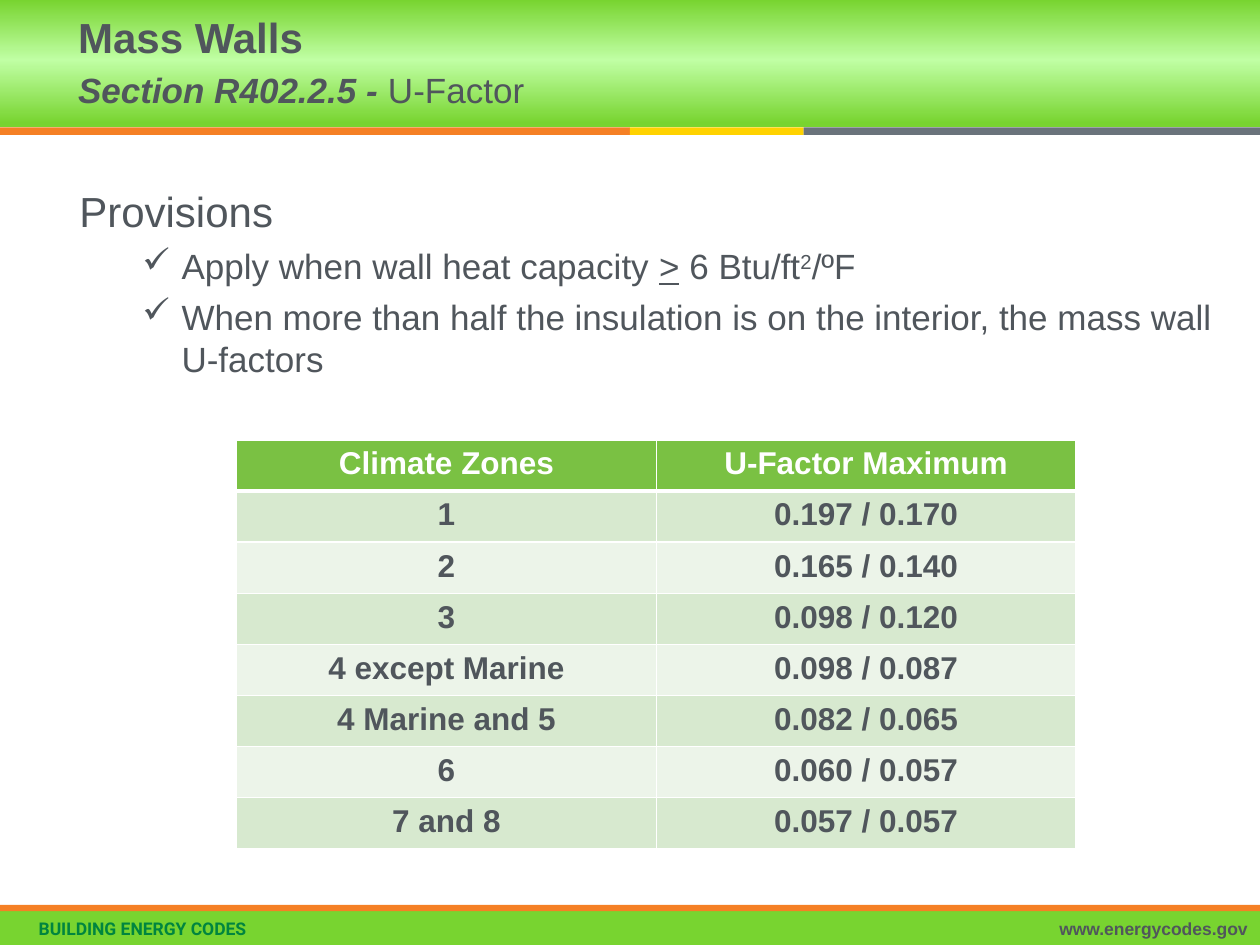
from dataclasses import dataclass

import pptx
import pptx.dml.color
import pptx.enum.shapes
import pptx.enum.text
import pptx.oxml
import pptx.oxml.ns
import pptx.util
from pptx.util import Cm

COLORS = {
    "text": "50565C", "white": "FFFFFF", "green": "78D430", "light": "C0FFA4",
    "brand": "00853F", "orange": "F58025", "yellow": "FFD200", "gray": "6A737B",
    "header": "7AC143", "odd": "D7E9CF", "even": "ECF4E9",
}
NAMESPACE = pptx.oxml.ns.nsdecls("a")
ALIGN = pptx.enum.text.PP_ALIGN
ANCHOR = pptx.enum.text.MSO_ANCHOR


@dataclass
class Bar:
    left: float
    top: float
    width: float
    height: float
    color: str


@dataclass
class Footer:
    text: str
    left: float
    width: float
    inset: float
    align: ALIGN
    font: str
    color: str


BANNER = Bar(-0.08, 0, 25.48, 2.57, "green")
BARS = [
    Bar(0, 18.36, 25.4, 0.69, "green"),
    Bar(0, 2.57, 12.7, 0.15, "orange"),
    Bar(12.7, 2.57, 3.5, 0.15, "yellow"),
    Bar(16.2, 2.57, 9.2, 0.15, "gray"),
    Bar(0, 18.24, 25.4, 0.13, "orange"),
]
FOOTERS = [
    Footer("BUILDING ENERGY CODES", 0.18, 20.24, 0.6, ALIGN.LEFT, "Roboto", "brand"),
    Footer("www.energycodes.gov", 15.21, 10.19, 0.25, ALIGN.RIGHT, "Arial", "text"),
]
ROWS = [
    ("Climate Zones", "U-Factor Maximum"),
    ("1", "0.197 / 0.170"),
    ("2", "0.165 / 0.140"),
    ("3", "0.098 / 0.120"),
    ("4 except Marine", "0.098 / 0.087"),
    ("4 Marine and 5", "0.082 / 0.065"),
    ("6", "0.060 / 0.057"),
    ("7 and 8", "0.057 / 0.057"),
]
BULLETS = [
    [("Apply when wall heat capacity ", {}), (">", {"underline": True}),
     (" 6 Btu/ft", {}), ("2", {"raised": True}), ("/ºF", {})],
    [("When more than half the insulation is on the interior, "
      "the mass wall U-factors", {})],
]


def rgb(name: str) -> pptx.dml.color.RGBColor:
    return pptx.dml.color.RGBColor.from_string(COLORS[name])


def add_span(para, text: str, *, size: float, font: str = "Arial", color: str = "text",
             bold: bool = False, italic: bool = False, underline: bool = False,
             raised: bool = False) -> None:
    span = para.add_run()
    span.text = text
    span.font.size = pptx.util.Pt(size)
    span.font.name = font
    span.font.color.rgb = rgb(color)
    span.font.bold = bold
    span.font.italic = italic
    span.font.underline = underline
    if raised:
        span._r.get_or_add_rPr().set("baseline", "30000")


def add_bar(page, bar: Bar):
    box = page.shapes.add_shape(
        pptx.enum.shapes.MSO_SHAPE.RECTANGLE,
        Cm(bar.left), Cm(bar.top), Cm(bar.width), Cm(bar.height))
    box.shadow.inherit = False
    box.fill.solid()
    box.fill.fore_color.rgb = rgb(bar.color)
    box.line.fill.background()
    return box


def add_banner(page) -> None:
    properties = add_bar(page, BANNER).element.spPr
    stops = "".join(
        f'<a:gs pos="{place * 1000}"><a:srgbClr val="{COLORS[name]}"/></a:gs>'
        for place, name in [(0, "green"), (47, "light"), (97, "green")])
    gradient = pptx.oxml.parse_xml(
        f'<a:gradFill {NAMESPACE} rotWithShape="1"><a:gsLst>{stops}</a:gsLst>'
        '<a:lin ang="5400000" scaled="0"/></a:gradFill>')
    solid = properties.find(pptx.oxml.ns.qn("a:solidFill"))
    properties.replace(solid, gradient)


def add_footer(page, footer: Footer) -> None:
    box = page.shapes.add_textbox(Cm(footer.left), Cm(18.39), Cm(footer.width), Cm(0.66))
    frame = box.text_frame
    frame.word_wrap = True
    frame.vertical_anchor = ANCHOR.MIDDLE
    frame.margin_left = Cm(footer.inset)
    frame.margin_top = frame.margin_bottom = 0
    para = frame.paragraphs[0]
    para.alignment = footer.align
    add_span(para, footer.text, size=10, font=footer.font, color=footer.color, bold=True)


def format_title(page) -> None:
    title = page.shapes.title
    title.left, title.top, title.width, title.height = Cm(1.32), Cm(0), Cm(18.06), Cm(2.49)
    title.text_frame.vertical_anchor = ANCHOR.MIDDLE
    para = title.text_frame.paragraphs[0]
    para.alignment = ALIGN.LEFT
    para.line_spacing = pptx.util.Pt(28)
    add_span(para, "Mass Walls", size=24, bold=True)
    para.add_line_break()
    add_span(para, "Section R402.2.5 - ", size=20, bold=True, italic=True)
    add_span(para, "U-Factor", size=20)
    page.shapes.element.append(title.element)


def add_provisions(page) -> None:
    box = page.shapes.add_textbox(Cm(1.35), Cm(3.53), Cm(23.65), Cm(4.7))
    frame = box.text_frame
    frame.word_wrap = True
    frame.margin_top = Cm(0.22)
    add_span(frame.paragraphs[0], "Provisions", size=24)
    for spans in BULLETS:
        para = frame.add_paragraph()
        para.level = 1
        para.space_before = pptx.util.Pt(4.8)
        properties = para._p.get_or_add_pPr()
        properties.set("marL", str(Cm(2.06)))
        properties.set("indent", str(-Cm(0.79)))
        properties.append(pptx.oxml.parse_xml(f'<a:buChar {NAMESPACE} char="✓"/>'))
        for text, style in spans:
            add_span(para, text, size=20, **style)


def set_borders(cell, bottom: float) -> None:
    properties = cell._tc.get_or_add_tcPr()
    for side, width in [("L", 1), ("R", 1), ("T", 1), ("B", bottom)]:
        properties.append(pptx.oxml.parse_xml(
            f'<a:ln{side} {NAMESPACE} w="{pptx.util.Pt(width)}"><a:solidFill>'
            f'<a:srgbClr val="{COLORS["white"]}"/></a:solidFill></a:ln{side}>'))


def add_factor_table(page) -> None:
    row_height = Cm(1.03)
    table = page.shapes.add_table(
        len(ROWS), 2, Cm(4.77), Cm(8.87), Cm(16.92), row_height * len(ROWS)).table
    for index, values in enumerate(ROWS):
        table.rows[index].height = row_height
        fill = "header" if index == 0 else "odd" if index % 2 else "even"
        for column, text in enumerate(values):
            cell = table.cell(index, column)
            set_borders(cell, bottom=1 if index else 3)
            cell.fill.solid()
            cell.fill.fore_color.rgb = rgb(fill)
            para = cell.text_frame.paragraphs[0]
            para.alignment = ALIGN.CENTER
            add_span(para, text, size=18, color="text" if index else "white", bold=True)


def main() -> None:
    deck = pptx.Presentation()
    deck.slide_width, deck.slide_height = Cm(25.4), Cm(19.05)
    page = deck.slides.add_slide(deck.slide_layouts[5])
    add_banner(page)
    for bar in BARS:
        add_bar(page, bar)
    for footer in FOOTERS:
        add_footer(page, footer)
    format_title(page)
    add_provisions(page)
    add_factor_table(page)
    deck.save("out.pptx")


if __name__ == "__main__":
    main()
